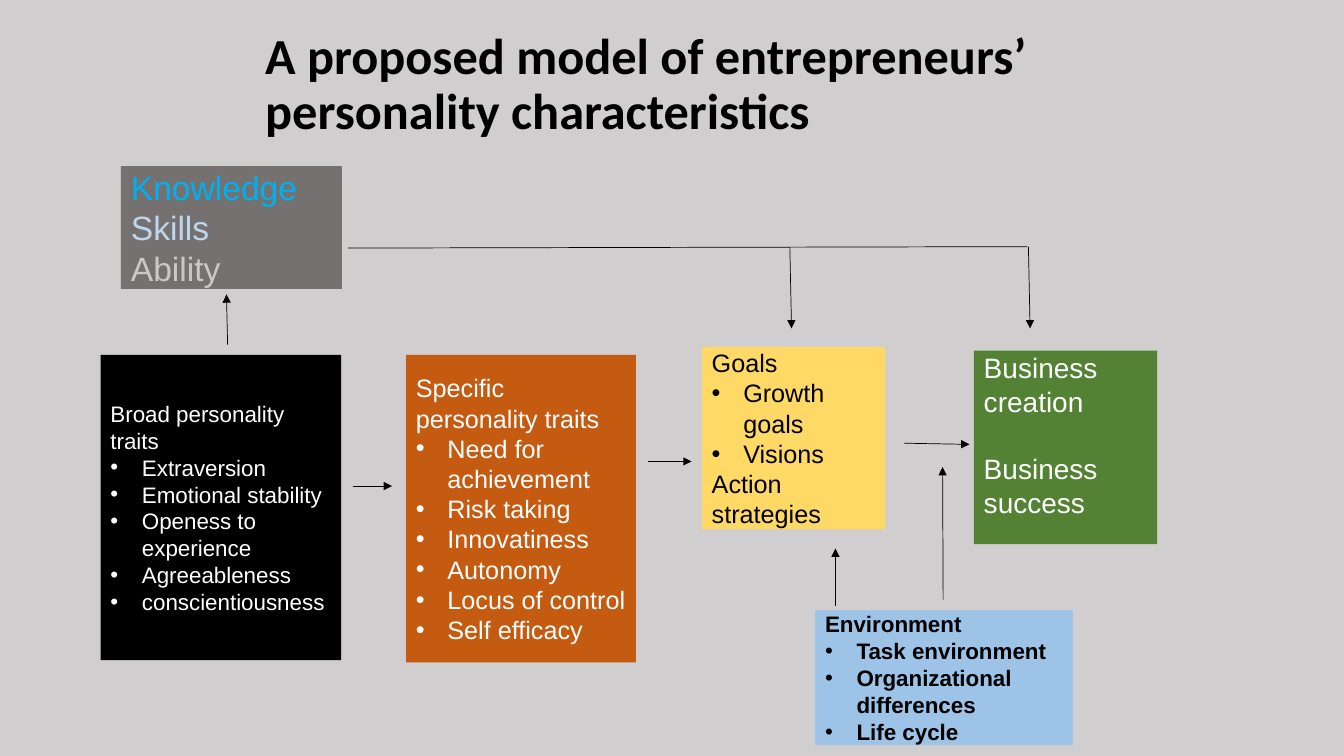
from dataclasses import dataclass

from lxml.etree import SubElement
from pptx import Presentation
from pptx.dml.color import RGBColor as RGB
from pptx.enum.shapes import MSO_CONNECTOR as Connector, MSO_SHAPE as Shape
from pptx.enum.text import MSO_ANCHOR as Anchor, MSO_AUTO_SIZE as AutoSize, PP_ALIGN as Align
from pptx.oxml.ns import qn
from pptx.util import Pt


@dataclass(frozen=True)
class Theme:
    heading_font: str = "Calibri"
    body_font: str = "Arial"
    title_size: int = 36
    large: int = 24
    outcome: int = 20
    medium: int = 18
    small: int = 16
    line_width: float = 0.5
    background: str = "D0CECE"
    black: str = "000000"
    white: str = "FFFFFF"
    grey: str = "767171"
    orange: str = "C55A11"
    yellow: str = "FFD966"
    green: str = "548235"
    blue: str = "9DC3E6"
    knowledge: str = "00B0F0"
    skills: str = "BDD7EE"
    ability: str = "C9C9C9"


class ModelSlide:
    BULLET = "• "
    INDENT = Pt(22.5)

    def __init__(self, deck, theme):
        self.theme = theme
        self.slide = deck.slides.add_slide(deck.slide_layouts[5])
        self.fill(self.slide.background, theme.background)

    @staticmethod
    def fill(target, color):
        target.fill.solid()
        target.fill.fore_color.rgb = RGB.from_string(color)

    @staticmethod
    def style(paragraph, font_name, size, color, bold=False):
        paragraph.alignment = Align.LEFT
        font = paragraph.font
        font.name, font.size, font.bold = font_name, Pt(size), bold
        font.color.rgb = RGB.from_string(color)

    def title(self, text, left, top, width, height):
        heading = self.slide.shapes.title
        heading.left, heading.top = Pt(left), Pt(top)
        heading.width, heading.height = Pt(width), Pt(height)
        frame = heading.text_frame
        frame.text = text
        frame.word_wrap = True
        frame.auto_size = AutoSize.NONE
        frame.vertical_anchor = Anchor.MIDDLE
        paragraph = frame.paragraphs[0]
        paragraph.line_spacing = 0.9
        self.style(paragraph, self.theme.heading_font, self.theme.title_size,
                   self.theme.black, bold=True)

    def bullet(self, paragraph):
        properties = paragraph._p.get_or_add_pPr()
        properties.set("marL", str(self.INDENT))
        properties.set("indent", str(-self.INDENT))
        SubElement(properties, qn("a:buFont")).set("typeface", self.theme.body_font)
        SubElement(properties, qn("a:buChar")).set("char", self.BULLET.strip())

    def box(self, bounds, color, size, lines, text_colors, bold=False):
        """Draw a filled box; one text colour serves all lines, or give one per line."""
        box = self.slide.shapes.add_shape(Shape.RECTANGLE, *map(Pt, bounds))
        box.shadow.inherit = False
        self.fill(box, color)
        box.line.fill.background()
        frame = box.text_frame
        frame.word_wrap = True
        frame.vertical_anchor = Anchor.MIDDLE
        frame.margin_right = Pt(6)
        frame.text = "\n".join(line.removeprefix(self.BULLET) for line in lines)
        for index, (paragraph, line) in enumerate(zip(frame.paragraphs, lines)):
            self.style(paragraph, self.theme.body_font, size,
                       text_colors[index % len(text_colors)], bold)
            if line.startswith(self.BULLET):
                self.bullet(paragraph)
        return frame

    def line(self, start, end, arrow=True):
        line = self.slide.shapes.add_connector(Connector.STRAIGHT, *map(Pt, start + end))
        line.line.width = Pt(self.theme.line_width)
        line.line.color.rgb = RGB.from_string(self.theme.black)
        properties = line._element.spPr
        if arrow:
            SubElement(properties.find(qn("a:ln")), qn("a:tailEnd")).set("type", "triangle")
        SubElement(properties, qn("a:effectLst"))


def main():
    deck = Presentation()
    deck.slide_width, deck.slide_height = Pt(960), Pt(540)
    theme = Theme()
    model = ModelSlide(deck, theme)
    model.title("A proposed model of entrepreneurs’ personality characteristics",
                182.2, 15.8, 614, 90.7)

    model.box((86.4, 118.6, 157.8, 87.8), theme.grey, theme.large,
              ["Knowledge", "Skills", "Ability"],
              [theme.knowledge, theme.skills, theme.ability])
    model.box((71.8, 253.5, 171.8, 218), theme.black, theme.small,
              ["Broad personality traits", "• Extraversion", "• Emotional stability",
               "• Openess to experience", "• Agreeableness", "• conscientiousness"],
              [theme.white])
    model.box((290, 253.5, 164.2, 219.6), theme.orange, theme.medium,
              ["Specific personality traits", "• Need for achievement", "• Risk taking",
               "• Innovatiness", "• Autonomy", "• Locus of control", "• Self efficacy"],
              [theme.white])
    model.box((501.3, 247.8, 131, 130.3), theme.yellow, theme.medium,
              ["Goals", "• Growth goals", "• Visions", "Action strategies"], [theme.black])
    outcomes = model.box((695.6, 250.5, 131, 138.2), theme.green, theme.outcome,
                         ["Business creation", "Business success"], [theme.white])
    outcomes.vertical_anchor = Anchor.TOP
    outcomes.margin_top = 0
    outcomes.paragraphs[1].space_before = Pt(24)
    model.box((582.3, 435.9, 184.2, 96.3), theme.blue, theme.small,
              ["Environment", "• Task environment", "• Organizational differences",
               "• Life cycle"], [theme.black], bold=True)

    for start, end in (
        ((252.5, 347.2), (280, 347.2)),      # broad to specific traits
        ((463, 329.6), (494, 329.6)),        # specific traits to goals
        ((646, 316.6), (692.5, 317.4)),      # goals to business
        ((596.8, 432.6), (596.8, 391.8)),    # environment to goals
        ((673.7, 428.2), (673.3, 333.6)),    # environment to business
        ((162.6, 246.3), (161.8, 210.3)),    # broad traits to knowledge
        ((734.6, 176.4), (735.8, 234.6)),    # knowledge to business
        ((564.2, 176.6), (565.4, 234.6)),    # knowledge to goals
    ):
        model.line(start, end)
    model.line((248.5, 177.2), (733.8, 176.2), arrow=False)

    deck.save("out.pptx")


if __name__ == "__main__":
    main()
